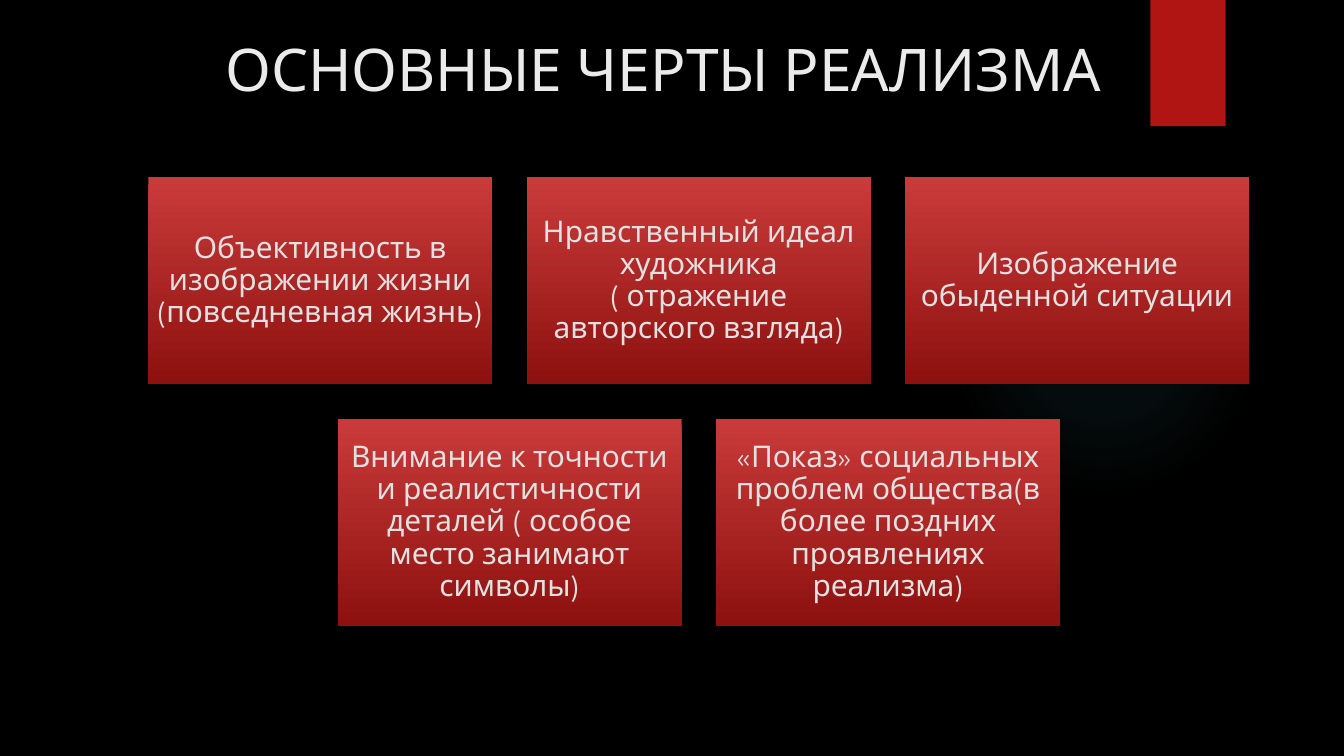
from lxml.etree import fromstring
from pptx import Presentation
from pptx.dml.color import RGBColor
from pptx.enum.shapes import MSO_SHAPE
from pptx.enum.text import MSO_ANCHOR, PP_ALIGN
from pptx.util import Inches, Pt

HEADING = "ОСНОВНЫЕ ЧЕРТЫ РЕАЛИЗМА"
TRAIT_ROWS = [
    [
        "Объективность в изображении жизни (повседневная жизнь)",
        "Нравственный идеал художника ( отражение авторского взгляда)",
        "Изображение обыденной ситуации",
    ],
    [
        "Внимание к точности и реалистичности деталей ( особое место занимают символы)",
        "«Показ» социальных проблем общества(в более поздних проявлениях реализма)",
    ],
]

FONT = "League Spartan"
SLIDE_W = 10
SLIDE_H = SLIDE_W * 9 / 16
CARD_W, CARD_H = 2.56, 1.54
GAP = CARD_W / 10
GRID_CENTER, GRID_TOP = 5.2, 1.32
CARD_GRADIENT = ["C93B3A", "8D110F"]
GLOW_COLOR = "50B9C1"
GLOW_STOPS = [(0, 7), (36, 6), (69, 0)]


def color(hex_code):
    return RGBColor.from_string(hex_code)


def add_plain_shape(slide, kind, left, top, width, height):
    shape = slide.shapes.add_shape(
        kind, Inches(left), Inches(top), Inches(width), Inches(height))
    shape.shadow.inherit = False
    shape.line.fill.background()
    return shape


def write_text(frame, text, size, hex_code, inset, anchor, **paragraph_format):
    frame_format = {"word_wrap": True, "vertical_anchor": anchor}
    for side in ("left", "top", "right", "bottom"):
        frame_format[f"margin_{side}"] = Inches(inset)
    for name, value in frame_format.items():
        setattr(frame, name, value)
    frame.text = text
    paragraph = frame.paragraphs[0]
    for name, value in {"alignment": PP_ALIGN.CENTER, **paragraph_format}.items():
        setattr(paragraph, name, value)
    font = paragraph.runs[0].font
    for name, value in {"name": FONT, "size": Pt(size), "bold": False}.items():
        setattr(font, name, value)
    font.color.rgb = color(hex_code)


def add_glow(slide):
    glow = add_plain_shape(slide, MSO_SHAPE.OVAL, 7.06, 1.38, 2.31, 2.31)
    glow.fill.solid()
    stops = "".join(
        f'<a:gs pos="{position * 1000}"><a:srgbClr val="{GLOW_COLOR}">'
        f'<a:alpha val="{opacity * 1000}"/></a:srgbClr></a:gs>'
        for position, opacity in GLOW_STOPS)
    gradient = fromstring(
        '<a:gradFill xmlns:a="http://schemas.openxmlformats.org/drawingml/2006/main">'
        f'<a:gsLst>{stops}</a:gsLst><a:path path="circle">'
        '<a:fillToRect l="50000" t="50000" r="50000" b="50000"/></a:path></a:gradFill>')
    properties = glow.element.spPr
    properties.replace(properties.find("{*}solidFill"), gradient)


def add_card(slide, trait, left, top):
    card = add_plain_shape(slide, MSO_SHAPE.RECTANGLE, left, top, CARD_W, CARD_H)
    card.fill.gradient()
    card.fill.gradient_angle = 270
    for stop, hex_code in zip(card.fill.gradient_stops, CARD_GRADIENT):
        stop.color.rgb = color(hex_code)
    write_text(card.text_frame, trait, 16, "E1E1E1", 0.06, MSO_ANCHOR.MIDDLE,
               line_spacing=0.9)


def main():
    deck = Presentation()
    deck.slide_width, deck.slide_height = Inches(SLIDE_W), Inches(SLIDE_H)
    slide = deck.slides.add_slide(deck.slide_layouts[5])
    slide.background.fill.solid()
    slide.background.fill.fore_color.rgb = color("000000")

    add_glow(slide)
    ribbon = add_plain_shape(slide, MSO_SHAPE.RECTANGLE, 8.56, 0, 0.56, 0.94)
    ribbon.fill.solid()
    ribbon.fill.fore_color.rgb = color("B01513")

    title = slide.shapes.title
    title.left, title.top = Inches(0.39), Inches(0.14)
    title.width, title.height = Inches(9.09), Inches(0.63)
    write_text(title.text_frame, HEADING, 31.5, "EBEBEB", 0.1, MSO_ANCHOR.TOP)

    for row, traits in enumerate(TRAIT_ROWS):
        row_width = len(traits) * (CARD_W + GAP) - GAP
        for column, trait in enumerate(traits):
            left = GRID_CENTER - row_width / 2 + column * (CARD_W + GAP)
            add_card(slide, trait, left, GRID_TOP + row * (CARD_H + GAP))

    deck.save("out.pptx")


if __name__ == "__main__":
    main()
